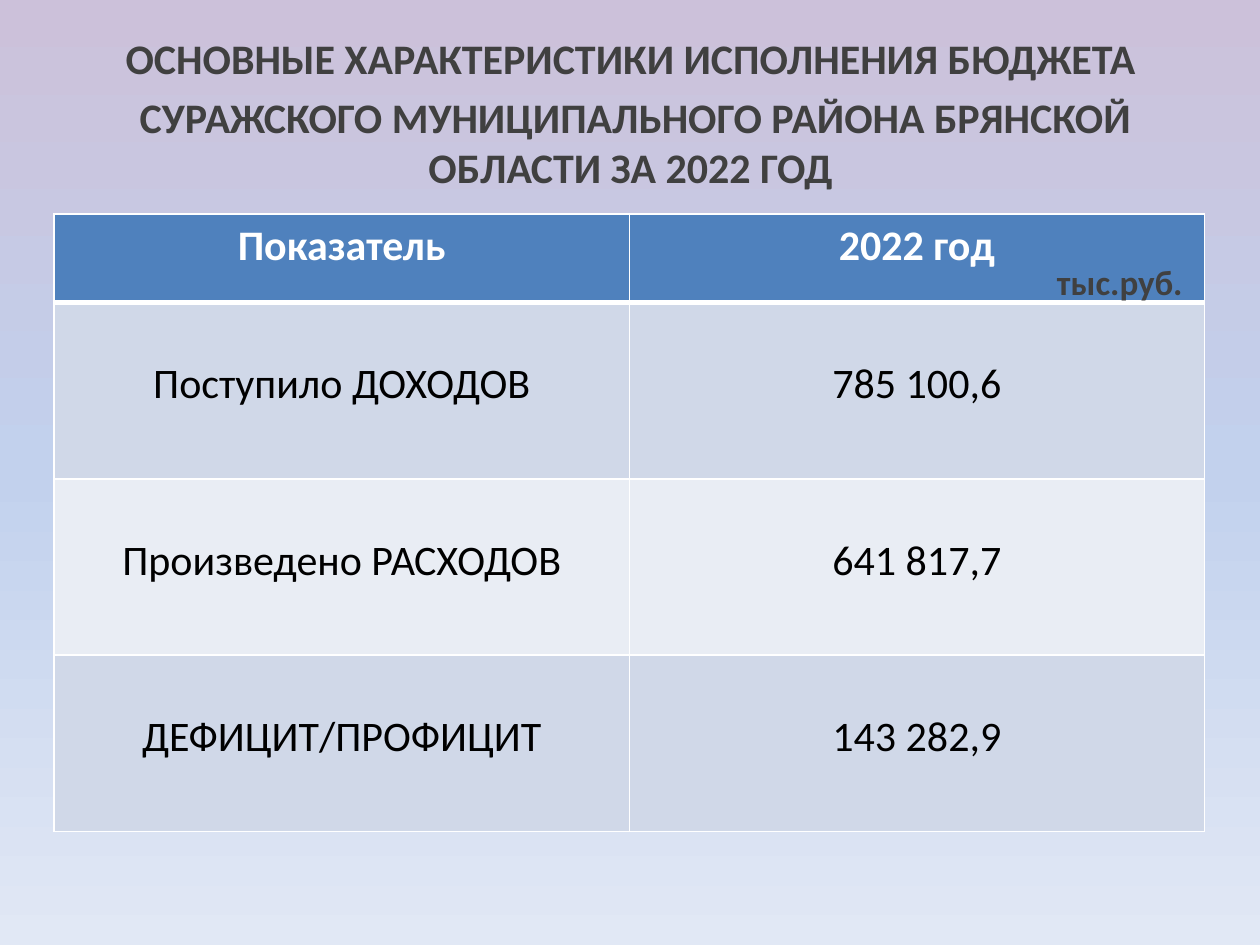
"""Build a budget execution summary slide with a table of totals."""
from lxml import etree
from pptx import Presentation
from pptx import util as u
from pptx.dml.color import RGBColor
from pptx.enum import text
from pptx.oxml import ns

WHITE = RGBColor(0xFF, 0xFF, 0xFF)
BLACK = RGBColor(0x00, 0x00, 0x00)
GRAY = RGBColor(0x40, 0x40, 0x40)
HEADER = RGBColor(0x4F, 0x81, 0xBD)
BANDS = (RGBColor(0xD0, 0xD8, 0xE8), RGBColor(0xE9, 0xED, 0xF4))
SKY = (
    (0, RGBColor(0xCC, 0xC1, 0xDA)),
    (50, RGBColor(0xC2, 0xD1, 0xED)),
    (100, RGBColor(0xE1, 0xE8, 0xF5)),
)
CENTER = text.PP_ALIGN.CENTER
LEFT = text.PP_ALIGN.LEFT

ROWS = (
    ("Показатель", "2022 год"),
    ("Поступило ДОХОДОВ", "785 100,6"),
    ("Произведено РАСХОДОВ", "641 817,7"),
    ("ДЕФИЦИТ/ПРОФИЦИТ", "143 282,9"),
)


def add_el(parent, tag, **attrs):
    el = etree.SubElement(parent, ns.qn(tag))
    for name, value in attrs.items():
        el.set(name, str(value))
    return el


def write(tf, content, size=24, color=GRAY, bold=True, align=CENTER, before=0):
    for i, line in enumerate(content.split("\n")):
        p = tf.paragraphs[0] if i == 0 else tf.add_paragraph()
        p.alignment = align
        p.space_before = u.Pt(before)
        r = p.add_run()
        r.text = line
        r.font.name = "Calibri"
        r.font.size = u.Pt(size)
        r.font.bold = bold
        r.font.color.rgb = color


class Deck:
    def __init__(self, prs):
        self.s = prs.slides.add_slide(prs.slide_layouts[5])

    def background(self, stops):
        fill = self.s.background.fill
        fill.gradient()
        grad = self.s.background._cSld.find(".//" + ns.qn("a:gradFill"))
        for child in list(grad):
            grad.remove(child)
        gs_lst = add_el(grad, "a:gsLst")
        for pos, color in stops:
            gs = add_el(gs_lst, "a:gs", pos=pos * 1000)
            add_el(gs, "a:srgbClr", val=color)
        add_el(grad, "a:lin", ang=90 * 60000, scaled=0)

    def frame(self, sp, box, content, **style):
        sp.left, sp.top, sp.width, sp.height = map(u.Inches, box)
        tf = sp.text_frame
        tf.word_wrap = True
        tf.auto_size = text.MSO_AUTO_SIZE.NONE
        tf.vertical_anchor = text.MSO_ANCHOR.TOP
        write(tf, content, **style)

    def title(self, box, content, **style):
        self.frame(self.s.shapes.title, box, content, **style)

    def label(self, box, content, **style):
        sp = self.s.shapes.add_textbox(*map(u.Inches, box))
        self.frame(sp, box, content, **style)

    def borders(self, cell, **widths):
        tc_pr = cell._tc.get_or_add_tcPr()
        for i, side in enumerate("LRTB"):
            ln = add_el(tc_pr, f"a:ln{side}", w=u.Pt(widths.get(side, 1)))
            add_el(add_el(ln, "a:solidFill"), "a:srgbClr", val=WHITE)
            tc_pr.insert(i, ln)

    def table(self, box, rows, heights):
        shape = self.s.shapes.add_table(len(rows), len(rows[0]), *map(u.Inches, box))
        for i, (row, height) in enumerate(zip(rows, heights)):
            shape.table.rows[i].height = u.Inches(height)
            head = i == 0
            for j, value in enumerate(row):
                cell = shape.table.cell(i, j)
                cell.fill.solid()
                cell.fill.fore_color.rgb = HEADER if head else BANDS[(i - 1) % 2]
                cell.margin_top = u.Inches(0.05 if head else 0.45)
                write(cell.text_frame, value, color=WHITE if head else BLACK, bold=head)
                self.borders(cell, B=3 if head else 1, T=3 if i == 1 else 1)


def main():
    prs = Presentation()
    prs.slide_width, prs.slide_height = u.Inches(10), u.Inches(7.5)
    deck = Deck(prs)
    deck.background(SKY)
    deck.title(
        (0.28, 0.21, 9.45, 1.02),
        "ОСНОВНЫЕ ХАРАКТЕРИСТИКИ ИСПОЛНЕНИЯ БЮДЖЕТА\n"
        " СУРАЖСКОГО МУНИЦИПАЛЬНОГО РАЙОНА БРЯНСКОЙ ОБЛАСТИ ЗА 2022 ГОД",
        before=4.8,
    )
    deck.table((0.43, 1.7, 9.13, 4.9), ROWS, (0.7, 1.4, 1.4, 1.4))
    deck.label((8.29, 2.02, 1.25, 0.39), "тыс.руб.", size=20, align=LEFT, before=4)
    prs.save("out.pptx")


if __name__ == "__main__":
    main()
